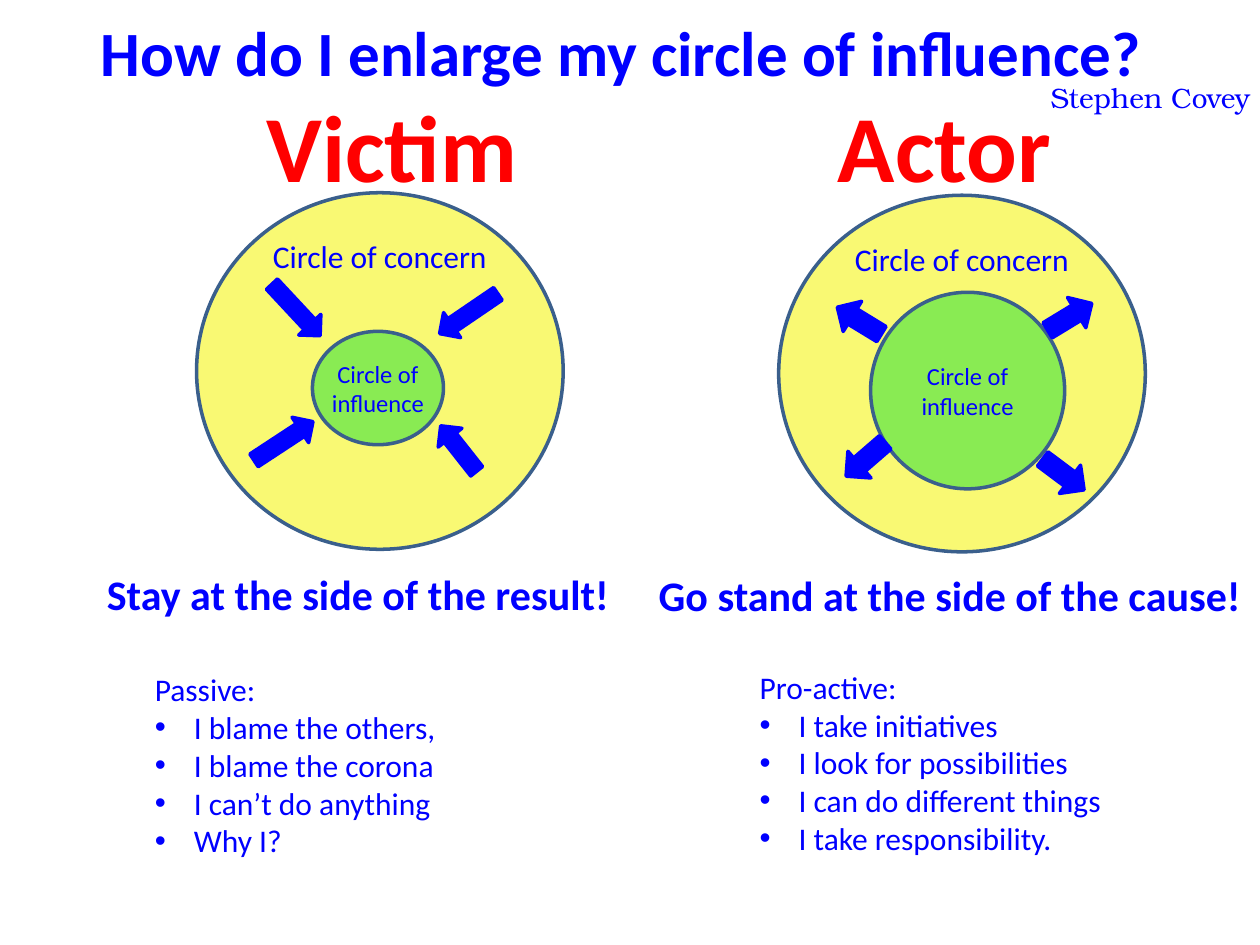
from pptx import Presentation
from pptx import util as u
from pptx.dml.color import RGBColor
from pptx.enum import shapes, text
from pptx.oxml.ns import qn

COLUMNS, ROWS = 100, 75
COLORS = {"blue": "0000FF", "red": "FF0000", "yellow": "F9F973",
          "green": "89EB53", "outline": "3A5F8C"}
BULLET_INDENT = u.Inches(0.31)


class SlideBuilder:
    """Places elements on a slide; every box is (column, row, columns, rows)."""

    def __init__(self, prs, font="Calibri"):
        self.font = font
        self.cell_w = prs.slide_width / COLUMNS
        self.cell_h = prs.slide_height / ROWS
        self.s = prs.slides.add_slide(prs.slide_layouts[6])

    def color(self, name):
        return RGBColor.from_string(COLORS[name])

    def place(self, box):
        x, y, w, h = box
        return [round(n) for n in (x * self.cell_w, y * self.cell_h,
                                   w * self.cell_w, h * self.cell_h)]

    def run(self, p, words, size, color="blue", bold=False, font=None):
        r = p.add_run()
        r.text = words
        r.font.size = u.Pt(size)
        r.font.name = font or self.font
        r.font.bold = bold
        r.font.color.rgb = self.color(color)

    def shape(self, kind, box, fill, line):
        sp = self.s.shapes.add_shape(kind, *self.place(box))
        sp.shadow.inherit = False
        sp.fill.solid()
        sp.fill.fore_color.rgb = self.color(fill)
        sp.line.color.rgb = self.color(line)
        sp.line.width = u.Pt(2)
        return sp

    def circle(self, box, fill, label, size, anchor, top_margin=0):
        sp = self.shape(shapes.MSO_SHAPE.OVAL, box, fill, "outline")
        tf = sp.text_frame
        tf.word_wrap = True
        tf.vertical_anchor = anchor
        tf.margin_left = tf.margin_right = tf.margin_bottom = 0
        tf.margin_top = u.Inches(top_margin)
        p = tf.paragraphs[0]
        p.alignment = text.PP_ALIGN.CENTER
        self.run(p, label, size)

    def arrow(self, box, angle):
        sp = self.shape(shapes.MSO_SHAPE.DOWN_ARROW, box, "blue", "blue")
        sp.rotation = angle

    def text_frame(self, box, wrap=False):
        tf = self.s.shapes.add_textbox(*self.place(box)).text_frame
        tf.word_wrap = wrap
        tf.auto_size = text.MSO_AUTO_SIZE.SHAPE_TO_FIT_TEXT
        return tf

    def line_of_text(self, box, words, size, centered=False, wrap=False, **style):
        p = self.text_frame(box, wrap).paragraphs[0]
        p.alignment = text.PP_ALIGN.CENTER if centered else text.PP_ALIGN.LEFT
        self.run(p, words, size, **style)

    def bullet_list(self, box, heading, items, size=18):
        tf = self.text_frame(box)
        self.run(tf.paragraphs[0], heading, size)
        for item in items:
            p = tf.add_paragraph()
            pPr = p._p.get_or_add_pPr()
            pPr.set("marL", str(BULLET_INDENT))
            pPr.set("indent", str(-BULLET_INDENT))
            font = pPr.makeelement(qn("a:buFont"), {"typeface": "Arial"})
            char = pPr.makeelement(qn("a:buChar"), {"char": "•"})
            pPr.extend([font, char])
            self.run(p, item, size)


ATTITUDES = [
    {
        "name": ("Victim", (20, 6.5, 22.2, 10.1)),
        "concern": (15.6, 15.3, 29.1, 28.3),
        "influence": (24.8, 26.3, 10.4, 9),
        "arrows": [((36, 22.1, 2.4, 5.6), 55.7), ((22.3, 21.8, 2.4, 5.6), 317),
                   ((21.3, 32.2, 2.4, 5.6), 236.7), ((35.2, 33.3, 2.4, 4.6), 141.7)],
        "motto": ("Stay at the side of the result!", (7.5, 44.6, 42.3, 5)),
        "list": ((11.3, 52.7, 25.2, 16.2), "Passive:",
                 ["I blame the others,", "I blame the corona",
                  "I can’t do anything", "Why I?"]),
    },
    {
        "name": ("Actor", (65.4, 6.5, 19.1, 10.1)),
        "concern": (61.8, 15.5, 29.1, 28.3),
        "influence": (69.1, 23.2, 15.4, 15.6),
        "arrows": [((83.5, 23.1, 2.8, 4.1), 238.7), ((83, 35.6, 2.8, 4.1), 306.8),
                   ((67.3, 34.4, 2.8, 4.1), 49.1), ((66.8, 23.4, 2.8, 4.1), 121.4)],
        "motto": ("Go stand at the side of the cause!", (51.3, 44.7, 48.7, 5)),
        "list": ((59.3, 52.5, 29.5, 16.2), "Pro-active:",
                 ["I take initiatives", "I look for possibilities",
                  "I can do different things", "I take responsibility."]),
    },
]


def main():
    prs = Presentation()
    prs.slide_width, prs.slide_height = u.Inches(10), u.Inches(7.5)
    b = SlideBuilder(prs)
    b.line_of_text((6, 0.6, 86.6, 7.1), "How do I enlarge my circle of influence?",
                   36, centered=True, bold=True)
    for side in ATTITUDES:
        b.circle(side["concern"], "yellow", "Circle of concern", 18,
                 text.MSO_ANCHOR.TOP, top_margin=-0.06)
        b.circle(side["influence"], "green", "Circle of influence", 14,
                 text.MSO_ANCHOR.MIDDLE)
        for box, angle in side["arrows"]:
            b.arrow(box, angle)
        words, box = side["name"]
        b.line_of_text(box, words, 54, centered=True, color="red", bold=True)
        words, box = side["motto"]
        b.line_of_text(box, words, 24, bold=True)
        b.bullet_list(*side["list"])
    b.line_of_text((82.4, 5.9, 18, 3.7), "Stephen Covey", 16, wrap=True,
                   font="TeX Gyre Bonum")
    prs.save("out.pptx")


if __name__ == "__main__":
    main()
